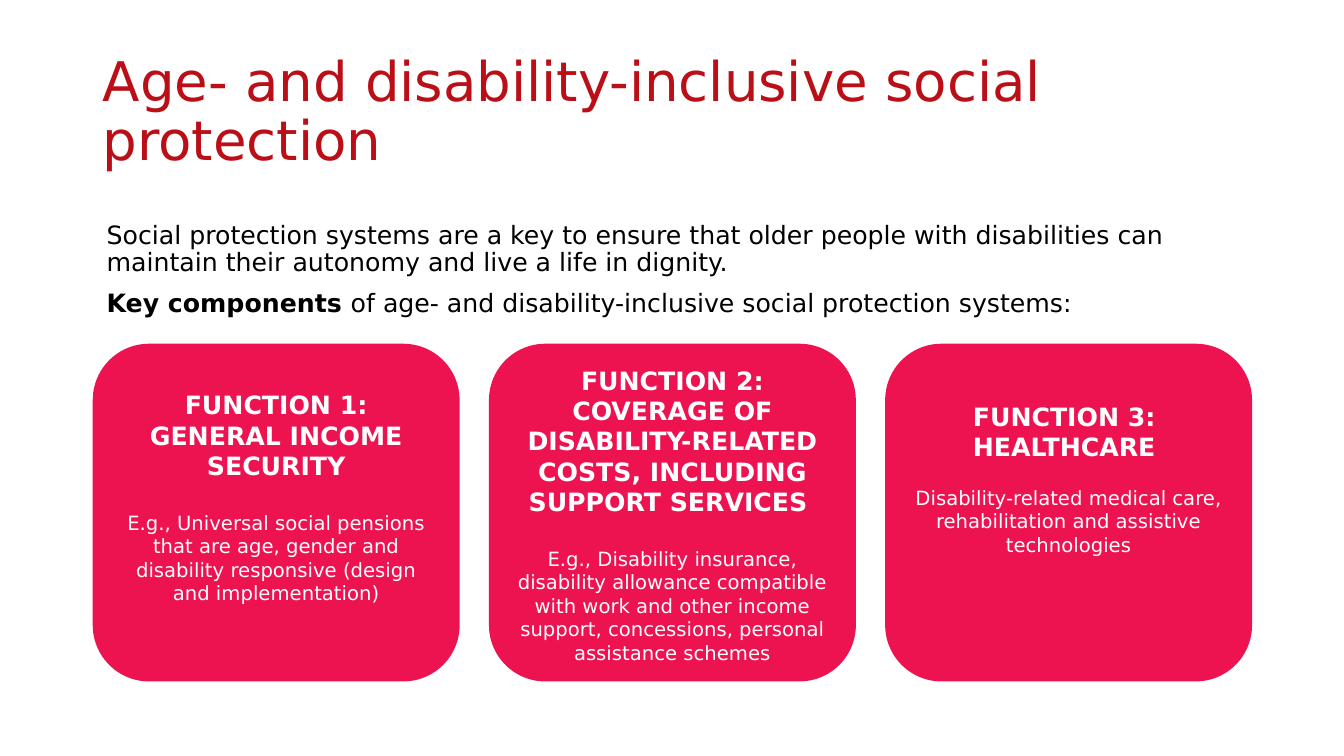
from dataclasses import dataclass

from pptx import Presentation
from pptx.dml.color import RGBColor
from pptx.enum.shapes import MSO_SHAPE as Preset
from pptx.enum.text import MSO_ANCHOR as Anchor, PP_ALIGN as Align
from pptx.util import Inches, Pt

PAGE_WIDTH = Inches(13.33)
PAGE_HEIGHT = Inches(7.5)


@dataclass(frozen=True)
class Theme:
    font: str = "DejaVu Sans"
    title: RGBColor = RGBColor.from_string("BB0F18")
    body: RGBColor = RGBColor.from_string("000000")
    card: RGBColor = RGBColor.from_string("ED1350")
    card_text: RGBColor = RGBColor.from_string("FFFFFF")
    title_size: int = 39
    body_size: int = 18
    detail_size: int = 14
    line_spacing: float = 0.9


@dataclass(frozen=True)
class Area:
    """A rectangle in percent of the page's width and height."""
    left: float
    top: float
    width: float
    height: float

    def lengths(self) -> tuple[int, int, int, int]:
        return (int(PAGE_WIDTH * self.left / 100), int(PAGE_HEIGHT * self.top / 100),
                int(PAGE_WIDTH * self.width / 100), int(PAGE_HEIGHT * self.height / 100))


@dataclass(frozen=True)
class Words:
    text: str
    size: int
    color: RGBColor
    bold: bool = False


@dataclass(frozen=True)
class Card:
    headings: tuple[str, str]
    detail: str
    inset: float  # share of the page height, in percent
    gap: float    # points between headings and detail


THEME = Theme()
TITLE_AREA = Area(6.9, 5.33, 86.27, 19.33)
INTRO_AREA = Area(7.2, 28.8, 85.9, 18.27)
FIRST_CARD = Area(6.9, 45.47, 27.3, 44.67)
CARD_PITCH = 29.48

TITLE = "Age- and disability-inclusive social protection"
INTRO = (
    (("Social protection systems are a key to ensure that older people with disabilities "
      "can maintain their autonomy and live a life in dignity.", False),),
    (("Key components ", True),
     ("of age- and disability-inclusive social protection systems:", False)),
)
CARDS = (
    Card(("FUNCTION 1:", "GENERAL INCOME SECURITY"),
         "E.g., Universal social pensions that are age, gender and disability responsive "
         "(design and implementation)", 3.9, 21.5),
    Card(("FUNCTION 2:", "COVERAGE OF DISABILITY-RELATED COSTS, INCLUDING SUPPORT SERVICES "),
         "E.g., Disability insurance, disability allowance compatible with work and other "
         "income support, concessions, personal assistance schemes", 0.67, 21.5),
    Card(("FUNCTION 3: ", "HEALTHCARE "),
         "Disability-related medical care, rehabilitation and assistive technologies",
         5.47, 17),
)


def add_words(para, words: Words) -> None:
    span = para.add_run()
    span.text = words.text
    span.font.name = THEME.font
    span.font.size = Pt(words.size)
    span.font.bold = words.bold
    span.font.color.rgb = words.color


def next_para(frame, index: int):
    """Return the frame's own first paragraph, or a new one after it."""
    return frame.paragraphs[0] if index == 0 else frame.add_paragraph()


def add_text(page, area: Area, paras: list[list[Words]], anchor: Anchor) -> None:
    frame = page.shapes.add_textbox(*area.lengths()).text_frame
    frame.word_wrap = True
    frame.vertical_anchor = anchor
    for index, line in enumerate(paras):
        para = next_para(frame, index)
        para.line_spacing = THEME.line_spacing
        para.space_before = Pt(10 if index else 0)
        for words in line:
            add_words(para, words)


def add_card(page, card: Card, column: int) -> None:
    area = Area(FIRST_CARD.left + column * CARD_PITCH, FIRST_CARD.top,
                FIRST_CARD.width, FIRST_CARD.height)
    box = page.shapes.add_shape(Preset.ROUNDED_RECTANGLE, *area.lengths())
    box.shadow.inherit = False
    box.fill.solid()
    box.fill.fore_color.rgb = THEME.card
    box.line.fill.background()
    frame = box.text_frame
    frame.word_wrap = True
    frame.vertical_anchor = Anchor.TOP
    frame.margin_top = int(PAGE_HEIGHT * card.inset / 100)
    lines = [Words(text, THEME.body_size, THEME.card_text, True) for text in card.headings]
    lines.append(Words(card.detail, THEME.detail_size, THEME.card_text))
    for index, words in enumerate(lines):
        para = next_para(frame, index)
        para.alignment = Align.CENTER
        add_words(para, words)
    para.space_before = Pt(card.gap)


def main() -> None:
    deck = Presentation()
    deck.slide_width, deck.slide_height = PAGE_WIDTH, PAGE_HEIGHT
    page = deck.slides.add_slide(deck.slide_layouts[6])
    add_text(page, TITLE_AREA, [[Words(TITLE, THEME.title_size, THEME.title)]], Anchor.MIDDLE)
    intro = [[Words(text, THEME.body_size, THEME.body, bold) for text, bold in line]
             for line in INTRO]
    add_text(page, INTRO_AREA, intro, Anchor.TOP)
    for column, card in enumerate(CARDS):
        add_card(page, card, column)
    deck.save("out.pptx")


if __name__ == "__main__":
    main()
